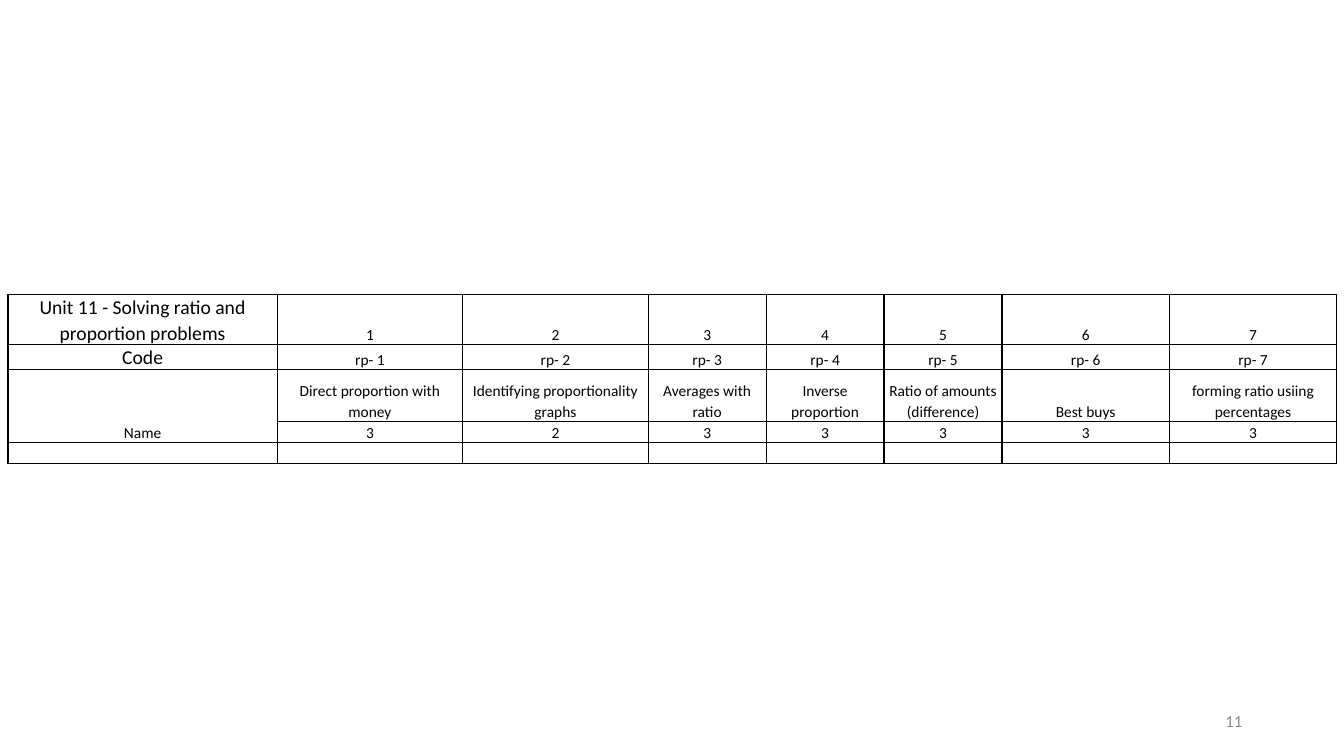
"""Build the assessment grid slide for Unit 11, ratio and proportion."""
from pptx import Presentation
from pptx import util as u
from pptx.dml.color import RGBColor
from pptx.enum import text
from pptx.oxml import parse_xml
from pptx.oxml.ns import nsdecls, qn

PX = 9144
FONT = "Calibri"
BLACK = RGBColor(0x00, 0x00, 0x00)
GREY = RGBColor(0x8C, 0x8C, 0x8C)

TOPICS = [
    ("Direct proportion with money", 3),
    ("Identifying proportionality graphs", 2),
    ("Averages with ratio", 3),
    ("Inverse proportion", 3),
    ("Ratio of amounts (difference)", 3),
    ("Best buys", 3),
    ("forming ratio usiing percentages", 3),
]
COLUMN_WIDTHS = [267, 184, 184, 117, 117, 117, 166, 166]
ROW_HEIGHTS = [21, 21, 51, 21, 21]
LARGE_LABELS = ("Unit 11 - Solving ratio and proportion problems", "Code")


def px(length):
    return u.Emu(length * PX)


def add_run(paragraph, wording, size, colour):
    run = paragraph.add_run()
    run.text = wording
    run.font.name = FONT
    run.font.size = u.Pt(size)
    run.font.color.rgb = colour


def add_borders(cell):
    properties = cell._tc.get_or_add_tcPr()
    for position, side in enumerate("LRTB"):
        properties.insert(position, parse_xml(
            f'<a:ln{side} {nsdecls("a")} w="{u.Pt(1)}"><a:solidFill>'
            f'<a:srgbClr val="{BLACK}"/></a:solidFill></a:ln{side}>'))


def fill_cell(cell, wording):
    cell.fill.background()
    cell.margin_left = cell.margin_right = px(3)
    cell.margin_top = cell.margin_bottom = 0
    cell.vertical_anchor = text.MSO_ANCHOR.BOTTOM
    paragraph = cell.text_frame.paragraphs[0]
    paragraph.alignment = text.PP_ALIGN.CENTER
    paragraph.line_spacing = 1.07
    if wording:
        add_run(paragraph, wording, 14 if wording in LARGE_LABELS else 11, BLACK)
    else:
        end = paragraph._p.makeelement(qn("a:endParaRPr"), {"sz": "1100"})
        paragraph._p.append(end)
    add_borders(cell)


def grid_rows():
    numbers = range(1, len(TOPICS) + 1)
    unit, code = LARGE_LABELS
    return [
        [unit, *(str(number) for number in numbers)],
        [code, *(f"rp- {number}" for number in numbers)],
        ["Name", *(topic for topic, marks in TOPICS)],
        ["", *(str(marks) for topic, marks in TOPICS)],
        [""] * len(COLUMN_WIDTHS),
    ]


def add_grid(slide, left, top):
    grid = slide.shapes.add_table(
        len(ROW_HEIGHTS), len(COLUMN_WIDTHS), px(left), px(top),
        px(sum(COLUMN_WIDTHS)), px(sum(ROW_HEIGHTS))).table
    grid.first_row = grid.horz_banding = False
    for column, width in zip(grid.columns, COLUMN_WIDTHS):
        column.width = px(width)
    for row, height, wordings in zip(grid.rows, ROW_HEIGHTS, grid_rows()):
        row.height = px(height)
        for cell, wording in zip(row.cells, wordings):
            fill_cell(cell, wording)
    grid.cell(2, 0).merge(grid.cell(3, 0))


def add_page_number(slide, number):
    frame = slide.shapes.add_textbox(px(942), px(695), px(300), px(40)).text_frame
    frame.word_wrap = True
    frame.vertical_anchor = text.MSO_ANCHOR.MIDDLE
    paragraph = frame.paragraphs[0]
    paragraph.alignment = text.PP_ALIGN.RIGHT
    add_run(paragraph, str(number), 12, GREY)


def main():
    deck = Presentation()
    deck.slide_width, deck.slide_height = px(1333), px(750)
    slide = deck.slides.add_slide(deck.slide_layouts[6])
    add_page_number(slide, 11)
    add_grid(slide, 8, 292)
    deck.save("out.pptx")


if __name__ == "__main__":
    main()
